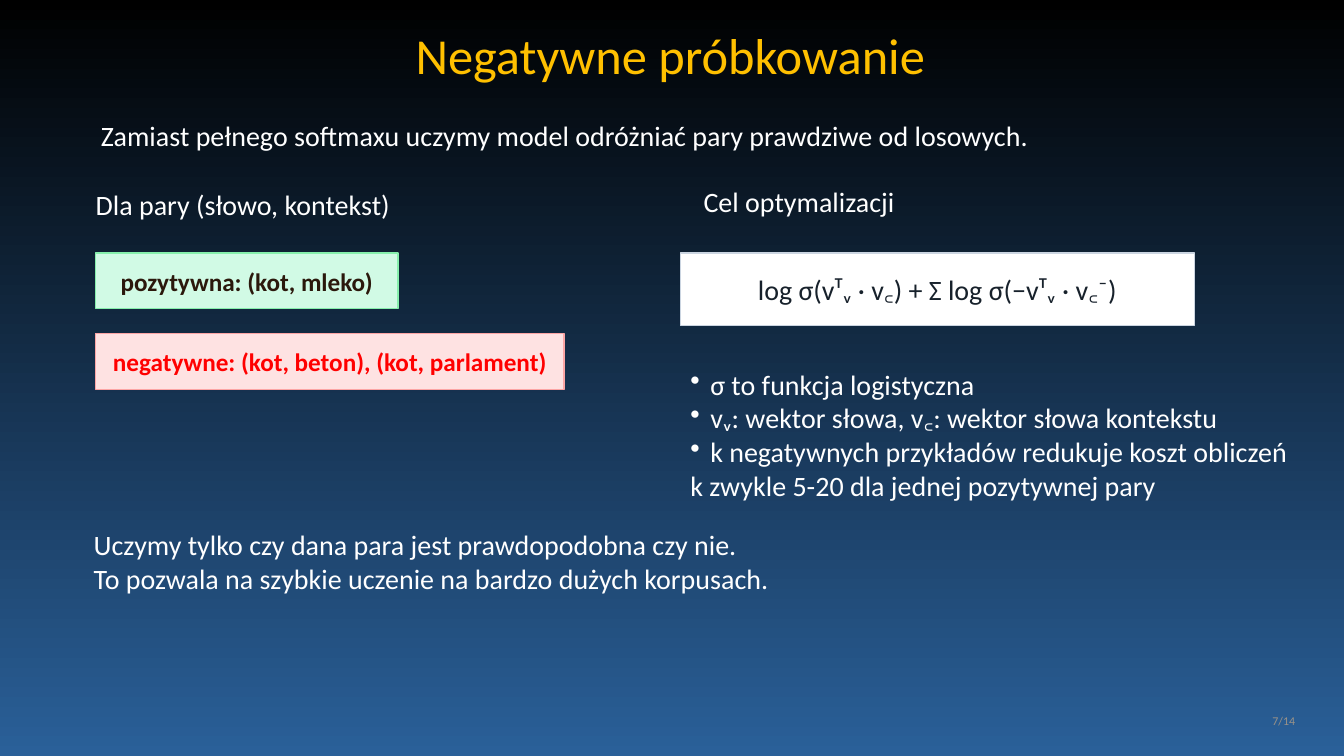
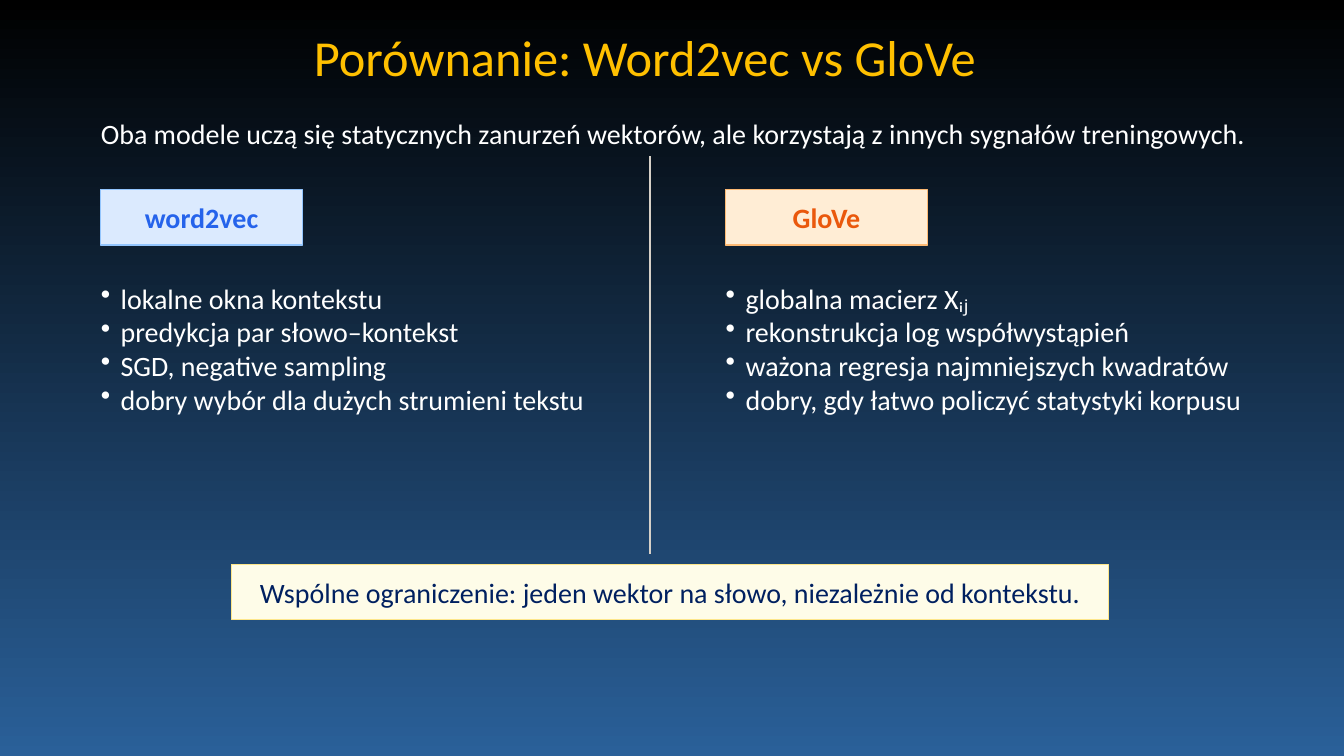
import pptx
import pptx.util
import pptx.dml.color
import pptx.enum.shapes
import pptx.enum.text
import pptx.oxml
import pptx.oxml.ns

Cm = pptx.util.Cm
ALIGN = pptx.enum.text.PP_ALIGN

COLORS = {
    "top": "000000", "bottom": "2A6099", "title": "FFC000", "text": "FFFFFF",
    "number": "9A9288", "divider": "D6D0C7",
    "positive": "D1FAE5", "positive_line": "86EFAC", "positive_text": "2B180C",
    "negative": "FEE2E2", "negative_line": "FCA5A5", "negative_text": "FF0000",
    "formula": "FFFFFF", "formula_line": "CBD5E1", "formula_text": "17212B",
    "word2vec": "DBEAFE", "word2vec_line": "93C5FD", "word2vec_text": "2563EB",
    "glove": "FFEDD5", "glove_line": "FDBA74", "glove_text": "EA580C",
    "limit": "FEFCE8", "limit_line": "FDE68A", "limit_text": "002060",
}


def rgb(name):
    return pptx.dml.color.RGBColor.from_string(COLORS[name])


class Deck:
    font = "Calibri"
    size = 20
    frame = {
        "margin_left": 0, "margin_top": 0, "margin_right": 0, "margin_bottom": 0,
        "word_wrap": True, "auto_size": pptx.enum.text.MSO_AUTO_SIZE.NONE,
        "vertical_anchor": pptx.enum.text.MSO_ANCHOR.MIDDLE,
    }

    def __init__(self):
        self.prs = pptx.Presentation()
        self.prs.slide_width, self.prs.slide_height = Cm(33.87), Cm(19.05)
        fill = self.prs.slide_master.background.fill
        fill.gradient()
        fill.gradient_angle = 270
        for stop, position, name in zip(fill.gradient_stops, (0, 1), ("top", "bottom")):
            stop.position = position
            stop.color.rgb = rgb(name)

    def slide(self, title, left, top):
        self.s = self.prs.slides.add_slide(self.prs.slide_layouts[5])
        sp = self.s.shapes.title
        box = {"left": left, "top": top, "width": 22.61, "height": 1.14}
        for key, value in box.items():
            setattr(sp, key, Cm(value))
        self.set_text(sp, [title], "title", size=36, align=ALIGN.CENTER)

    def set_text(self, sp, lines, color, size=size, bold=False, align=ALIGN.LEFT, bullets=0):
        tf = sp.text_frame
        for key, value in self.frame.items():
            setattr(tf, key, value)
        style = {"name": self.font, "size": pptx.util.Pt(size), "bold": bold}
        for i, line in enumerate(lines):
            p = tf.paragraphs[0] if i == 0 else tf.add_paragraph()
            p.alignment = align
            if i < bullets:
                self.bullet(p)
            r = p.add_run()
            r.text = line
            for key, value in style.items():
                setattr(r.font, key, value)
            r.font.color.rgb = rgb(color)

    def bullet(self, p):
        pPr = p._p.get_or_add_pPr()
        indent = Cm(0.5)
        pPr.set("marL", str(indent))
        pPr.set("indent", str(-indent))
        pPr.append(pptx.oxml.parse_xml(
            f'<a:buChar {pptx.oxml.ns.nsdecls("a")} char="•"/>'))

    def text(self, box, *lines, color="text", **style):
        sp = self.s.shapes.add_textbox(*map(Cm, box))
        self.set_text(sp, lines, color, **style)

    def panel(self, box, text, name, **style):
        sp = self.s.shapes.add_shape(
            pptx.enum.shapes.MSO_SHAPE.RECTANGLE, *map(Cm, box))
        sp.shadow.inherit = False
        sp.fill.solid()
        sp.fill.fore_color.rgb = rgb(name)
        sp.line.color.rgb = rgb(name + "_line")
        sp.line.width = pptx.util.Pt(1)
        self.set_text(sp, [text], name + "_text", align=ALIGN.CENTER, **style)

    def divider(self, x, top, bottom):
        line = self.s.shapes.add_connector(
            pptx.enum.shapes.MSO_CONNECTOR.STRAIGHT, *map(Cm, (x, top, x, bottom)))
        line.line.color.rgb = rgb("divider")
        line.line.width = pptx.util.Pt(1)
        line._element.spPr.append(pptx.oxml.parse_xml(
            f'<a:effectLst {pptx.oxml.ns.nsdecls("a")}/>'))


def sampling(deck):
    deck.slide("Negatywne próbkowanie", 5.59, 0.79)
    deck.text((2.54, 2.16, 28.19, 2.51),
              "Zamiast pełnego softmaxu uczymy model odróżniać pary prawdziwe od losowych.")
    deck.text((2.41, 4.78, 10.16, 0.76), "Dla pary (słowo, kontekst)")
    deck.panel((2.41, 6.38, 7.62, 1.4), "pozytywna: (kot, mleko)",
               "positive", size=18, bold=True)
    deck.panel((2.41, 8.41, 11.81, 1.4), "negatywne: (kot, beton), (kot, parlament)",
               "negative", size=18, bold=True)
    deck.text((17.73, 4.7, 7.11, 0.76), "Cel optymalizacji")
    deck.panel((17.15, 6.38, 12.95, 1.83), "log σ(vᵀᵥ · v꜀) + Σ log σ(−vᵀᵥ · v꜀⁻)", "formula")
    deck.text((17.4, 9.17, 15.62, 3.56),
              "σ to funkcja logistyczna",
              "vᵥ: wektor słowa, v꜀: wektor słowa kontekstu",
              "k negatywnych przykładów redukuje koszt obliczeń",
              "k zwykle 5-20 dla jednej pozytywnej pary", bullets=3)
    deck.text((2.36, 12.95, 28.19, 2.39),
              "Uczymy tylko czy dana para jest prawdopodobna czy nie.",
              "To pozwala na szybkie uczenie na bardzo dużych korpusach.")
    deck.text((31.12, 17.91, 1.52, 0.51), "7/14",
              color="number", size=8.5, align=ALIGN.RIGHT)


def comparison(deck):
    deck.slide("Porównanie: Word2vec vs GloVe", 4.95, 0.84)
    deck.text((2.54, 2.18, 29.51, 2.34),
              "Oba modele uczą się statycznych zanurzeń wektorów, "
              "ale korzystają z innych sygnałów treningowych.")
    columns = [
        (2.54, 12.19, "word2vec", "word2vec", (
            "lokalne okna kontekstu",
            "predykcja par słowo–kontekst",
            "SGD, negative sampling",
            "dobry wybór dla dużych strumieni tekstu")),
        (18.29, 13.46, "GloVe", "glove", (
            "globalna macierz Xᵢⱼ",
            "rekonstrukcja log współwystąpień",
            "ważona regresja najmniejszych kwadratów",
            "dobry, gdy łatwo policzyć statystyki korpusu")),
    ]
    for left, width, label, name, features in columns:
        deck.panel((left, 4.78, 5.08, 1.4), label, name, bold=True)
        deck.text((left, 6.81, width, 3.94), *features, bullets=len(features))
    deck.divider(16.38, 3.94, 13.97)
    deck.panel((5.84, 14.22, 22.1, 1.4),
               "Wspólne ograniczenie: jeden wektor na słowo, niezależnie od kontekstu.", "limit")


def main():
    deck = Deck()
    sampling(deck)
    comparison(deck)
    deck.prs.save("out.pptx")


if __name__ == "__main__":
    main()
